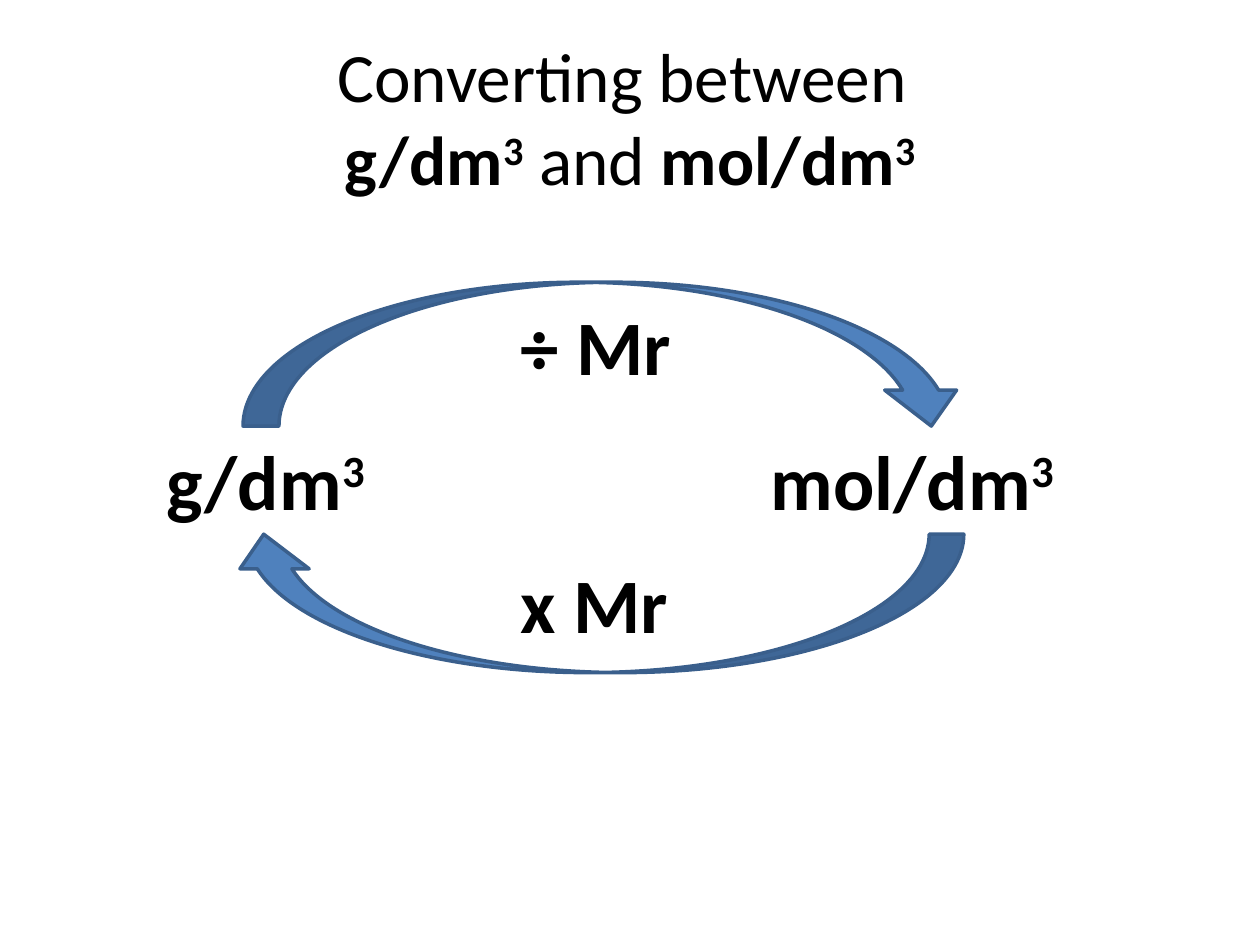
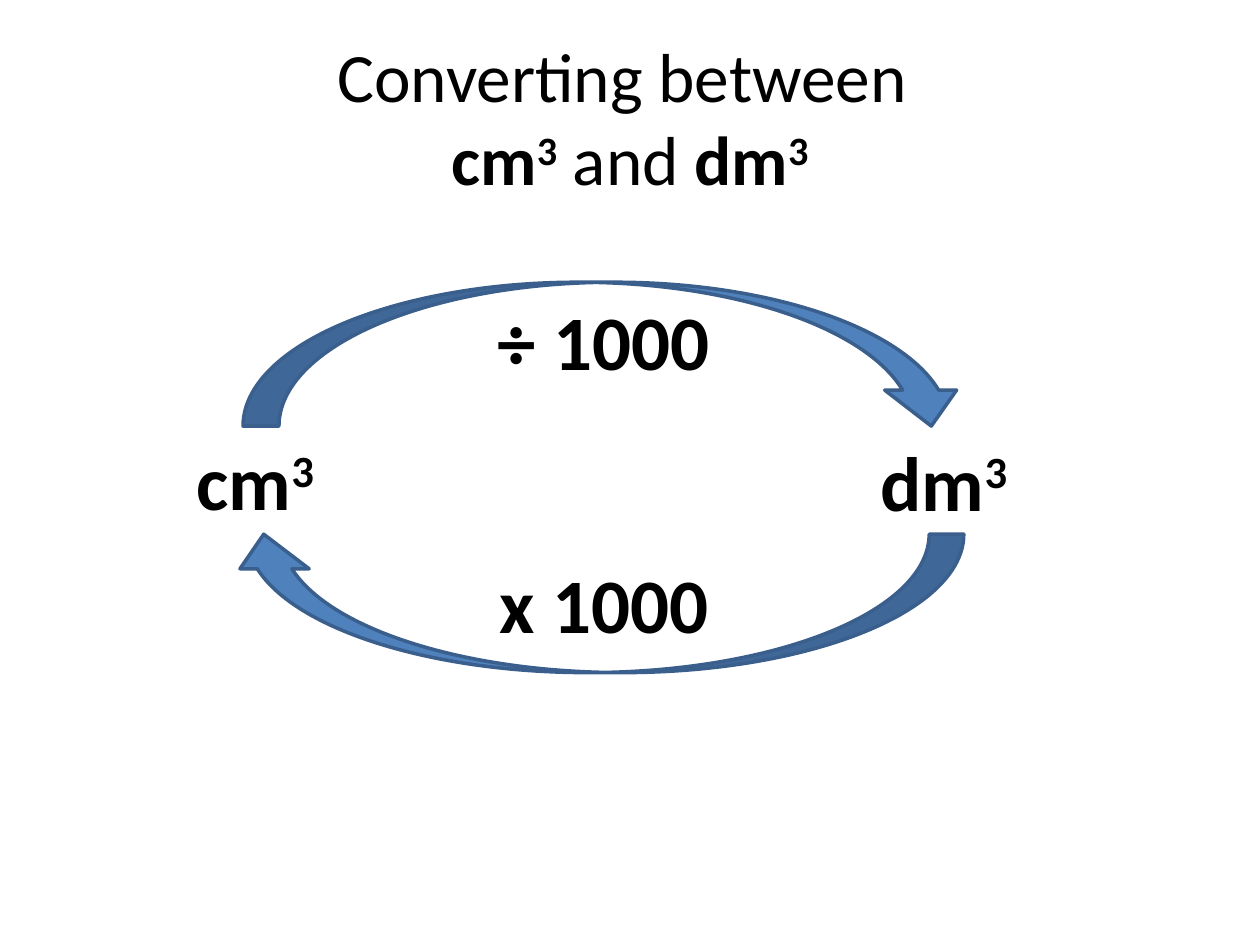
"""Build two slides on converting between units of concentration and volume."""
from pptx import Presentation
from pptx.dml.color import RGBColor
from pptx.enum.shapes import MSO_SHAPE
from pptx.enum.text import MSO_ANCHOR, MSO_AUTO_SIZE, PP_ALIGN
from pptx.util import Cm, Pt

BLACK = RGBColor(0x00, 0x00, 0x00)
BLUE = RGBColor(0x4F, 0x81, 0xBD)
DARK_BLUE = RGBColor(0x3A, 0x5F, 0x8C)
DOWN_ARROW = MSO_SHAPE.CURVED_DOWN_ARROW
UP_ARROW = MSO_SHAPE.CURVED_UP_ARROW
MIDDLE = MSO_ANCHOR.MIDDLE
NO_FIT = MSO_AUTO_SIZE.NONE
GROW = MSO_AUTO_SIZE.SHAPE_TO_FIT_TEXT
CENTER = PP_ALIGN.CENTER

TITLE_ONLY = 5
LABEL_HEIGHT = 2.13
TITLE_PLACE = {"left": Cm(1.27), "top": Cm(0.76), "width": Cm(22.86), "height": Cm(3.18)}
TITLE_FRAME = {"auto_size": NO_FIT, "vertical_anchor": MIDDLE, "word_wrap": True}
TITLE_FONT = {"name": "Calibri", "size": Pt(39.6)}
LABEL_FONT = {"name": "Calibri", "size": Pt(44)}

CONVERSIONS = [
    {
        "units": ("g/dm", "mol/dm"),
        "labels": [
            ("g/dm", True, 3.1, 8.61, 5.79, True),
            ("mol/dm", True, 15.29, 8.61, 6.32, False),
            ("÷ Mr", False, 10.24, 5.89, 3.58, False),
            ("x Mr", False, 10.24, 11.1, 3.58, False),
        ],
    },
    {
        "units": ("cm", "dm"),
        "labels": [
            ("cm", True, 3.71, 8.61, 5.21, True),
            ("dm", True, 17.5, 8.64, 3.15, False),
            ("÷ 1000", False, 9.78, 5.79, 4.83, False),
            ("x 1000", False, 9.83, 11.1, 4.75, False),
        ],
    },
]


def apply_format(target, values):
    """Set every attribute named in values on target."""
    for attribute, value in values.items():
        setattr(target, attribute, value)


class ConversionDeck:
    """Hold the presentation, its style and the current slide."""

    def __init__(self):
        """Start an empty 4:3 presentation."""
        self.presentation = Presentation()
        self.presentation.slide_width = Cm(25.4)
        self.presentation.slide_height = Cm(19.05)
        self.slide = None

    def new_slide(self):
        """Add a slide that has only a title and make it current."""
        layout = self.presentation.slide_layouts[TITLE_ONLY]
        self.slide = self.presentation.slides.add_slide(layout)

    def add_text(self, paragraph, text, font, bold=False, superscript=False):
        """Append one formatted run to the paragraph."""
        run = paragraph.add_run()
        run.text = text
        apply_format(run.font, {**font, "bold": bold})
        run.font.color.rgb = BLACK
        if superscript:
            run.font._element.set("baseline", "30000")

    def add_cubed(self, paragraph, unit, font):
        """Append a bold unit with a raised 3."""
        self.add_text(paragraph, unit, font, bold=True)
        self.add_text(paragraph, "3", font, bold=True, superscript=True)

    def title(self, first_unit, second_unit):
        """Fill the title with the two units converted."""
        heading = self.slide.shapes.title
        apply_format(heading, TITLE_PLACE)
        apply_format(heading.text_frame, TITLE_FRAME)
        paragraph = heading.text_frame.paragraphs[0]
        paragraph.alignment = CENTER
        self.add_text(paragraph, "Converting between ", TITLE_FONT)
        paragraph.add_line_break()
        self.add_cubed(paragraph, first_unit, TITLE_FONT)
        self.add_text(paragraph, " and ", TITLE_FONT)
        self.add_cubed(paragraph, second_unit, TITLE_FONT)

    def label(self, text, cubed, left, top, width, wrap):
        """Add a bold label for a unit or an operation."""
        label = self.slide.shapes.add_textbox(Cm(left), Cm(top), Cm(width), Cm(LABEL_HEIGHT))
        apply_format(label.text_frame, {"word_wrap": wrap, "auto_size": GROW})
        paragraph = label.text_frame.paragraphs[0]
        if cubed:
            self.add_cubed(paragraph, text, LABEL_FONT)
        else:
            self.add_text(paragraph, text, LABEL_FONT, bold=True)

    def arrow(self, preset, left, top, width, height, flipped=False):
        """Add a curved block arrow, mirrored if flipped."""
        arrow = self.slide.shapes.add_shape(preset, Cm(left), Cm(top), Cm(width), Cm(height))
        arrow.shadow.inherit = False
        arrow.fill.solid()
        arrow.fill.fore_color.rgb = BLUE
        arrow.line.color.rgb = DARK_BLUE
        arrow.line.width = Pt(2)
        if flipped:
            arrow._element.spPr.xfrm.set("flipH", "1")

    def conversion(self, units, labels):
        """Build one slide with its cycle of two units."""
        self.new_slide()
        self.title(*units)
        self.arrow(DOWN_ARROW, 4.9, 5.69, 14.6, 2.9)
        self.arrow(UP_ARROW, 4.62, 10.77, 14.81, 2.79, flipped=True)
        for label in labels:
            self.label(*label)


def main():
    """Build and save the presentation."""
    deck = ConversionDeck()
    for conversion in CONVERSIONS:
        deck.conversion(**conversion)
    deck.presentation.save("out.pptx")


if __name__ == "__main__":
    main()
